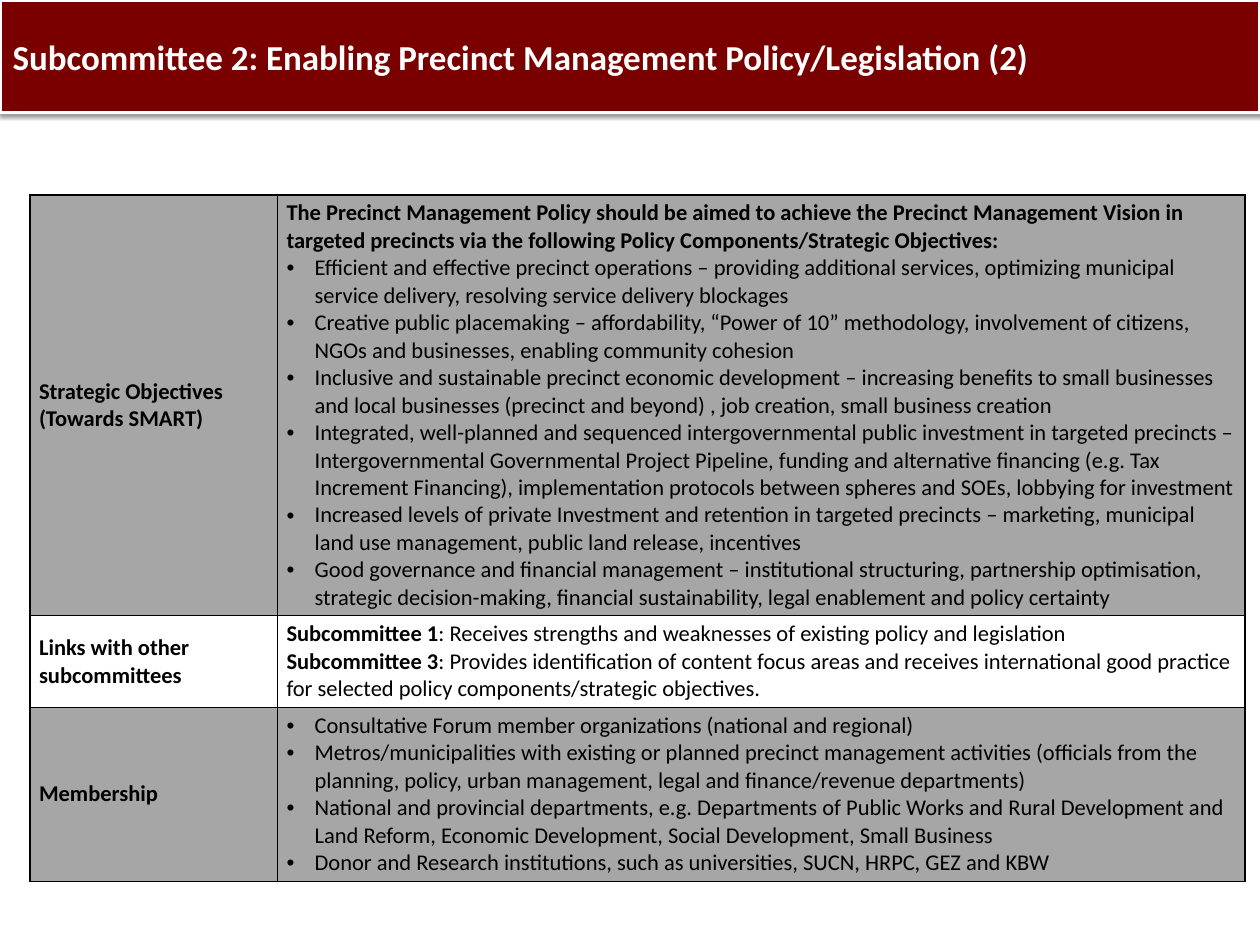
import pptx
import pptx.util
import pptx.dml.color
import pptx.enum.text
import pptx.oxml
from dataclasses import dataclass
from lxml import etree

Pt = pptx.util.Pt
RGB = pptx.dml.color.RGBColor
MIDDLE = pptx.enum.text.MSO_ANCHOR.MIDDLE
DRAWING = 'xmlns:a="http://schemas.openxmlformats.org/drawingml/2006/main"'


@dataclass(frozen=True)
class Theme:
    font: str = "Calibri"
    title_size: int = 28
    body_size: int = 18
    banner: str = "7A0000"
    light: str = "FFFFFF"
    dark: str = "000000"
    shade: str = "A6A6A6"


theme = Theme()


def style_font(font, size, color, bold):
    font.name = theme.font
    font.size = Pt(size)
    font.color.rgb = RGB.from_string(color)
    font.bold = bold


def add_xml(parent, xml):
    parent.append(pptx.oxml.parse_xml(xml))


deck = pptx.Presentation()
deck.slide_width = Pt(1008)
deck.slide_height = Pt(756)
slide = deck.slides.add_slide(deck.slide_layouts[5])

title = slide.shapes.title
title.left, title.top, title.width, title.height = Pt(0), Pt(0), Pt(1008), Pt(90)
title.fill.solid()
title.fill.fore_color.rgb = RGB.from_string(theme.banner)
title.line.color.rgb = RGB.from_string(theme.light)
title.line.width = Pt(3)
add_xml(
    title._element.spPr,
    f'<a:effectLst {DRAWING}><a:outerShdw blurRad="{Pt(3.1)}" dist="{Pt(1.6)}" '
    f'dir="5400000" rotWithShape="0"><a:srgbClr val="{theme.dark}">'
    '<a:alpha val="38000"/></a:srgbClr></a:outerShdw></a:effectLst>',
)
title_frame = title.text_frame
title_frame.text = "Subcommittee 2: Enabling Precinct Management Policy/Legislation (2)"
title_frame.word_wrap = True
title_frame.auto_size = pptx.enum.text.MSO_AUTO_SIZE.NONE
title_frame.vertical_anchor = MIDDLE
title_frame.margin_left = title_frame.margin_right = Pt(10)
title_frame.margin_top = title_frame.margin_bottom = Pt(5)
heading = title_frame.paragraphs[0]
heading.alignment = pptx.enum.text.PP_ALIGN.LEFT
style_font(heading.font, theme.title_size, theme.light, True)

topics = [
    (336, theme.shade, ["Strategic Objectives", "(Towards SMART)"], [
        ("lead", "The Precinct Management Policy should be aimed to achieve the Precinct Management Vision in targeted precincts via the following Policy Components/Strategic Objectives:"),
        ("bullet", "Efficient and effective precinct operations – providing additional services, optimizing municipal service delivery, resolving service delivery blockages"),
        ("bullet", "Creative public placemaking – affordability, “Power of 10” methodology, involvement of citizens, NGOs and businesses, enabling community cohesion"),
        ("bullet", "Inclusive and sustainable precinct economic development – increasing benefits to small businesses and local businesses (precinct and beyond) , job creation, small business creation"),
        ("bullet", "Integrated, well-planned and sequenced intergovernmental public investment in targeted precincts – Intergovernmental Governmental Project Pipeline, funding and alternative financing (e.g. Tax Increment Financing), implementation protocols between spheres and SOEs, lobbying for investment"),
        ("bullet", "Increased levels of private Investment and retention in targeted precincts – marketing, municipal land use management, public land release, incentives"),
        ("bullet", "Good governance and financial management – institutional structuring, partnership optimisation, strategic decision-making, financial sustainability, legal enablement and policy certainty"),
    ]),
    (73, None, ["Links with other subcommittees"], [
        ("Subcommittee 1", ": Receives strengths and weaknesses of existing policy and legislation"),
        ("Subcommittee 3", ": Provides identification of content focus areas and receives international good practice for selected policy components/strategic objectives."),
    ]),
    (139, theme.shade, ["Membership"], [
        ("bullet", "Consultative Forum member organizations (national and regional)"),
        ("bullet", "Metros/municipalities with existing or planned precinct management activities (officials from the planning, policy, urban management, legal and finance/revenue departments)"),
        ("bullet", "National and provincial departments, e.g. Departments of Public Works and Rural Development and Land Reform, Economic Development, Social Development, Small Business"),
        ("bullet", "Donor and Research institutions, such as universities, SUCN, HRPC, GEZ and KBW"),
    ]),
]

table = slide.shapes.add_table(
    len(topics), 2, Pt(24), Pt(156), Pt(972), Pt(sum(topic[0] for topic in topics))
).table
table.first_row = False
table.horz_banding = False
table.columns[0].width = Pt(198)
table.columns[1].width = Pt(774)

for row, (height, shade, labels, details) in enumerate(topics):
    table.rows[row].height = Pt(height)
    label_lines = [("lead", label) for label in labels]
    for column, lines in enumerate((label_lines, details)):
        cell = table.cell(row, column)
        if column == 0:
            cell.vertical_anchor = MIDDLE
        for side in ("lnL", "lnR", "lnT", "lnB"):
            add_xml(
                cell._tc.get_or_add_tcPr(),
                f'<a:{side} {DRAWING} w="{Pt(1)}"><a:solidFill>'
                f'<a:srgbClr val="{theme.dark}"/></a:solidFill></a:{side}>',
            )
        if shade:
            cell.fill.solid()
            cell.fill.fore_color.rgb = RGB.from_string(shade)
        else:
            cell.fill.background()

        for index, (role, text) in enumerate(lines):
            frame = cell.text_frame
            paragraph = frame.add_paragraph() if index else frame.paragraphs[0]
            if role in ("lead", "bullet"):
                paragraph.text = text
                style_font(paragraph.font, theme.body_size, theme.dark, role == "lead")
            else:
                for part, bold in ((role, True), (text, False)):
                    run = paragraph.add_run()
                    run.text = part
                    style_font(run.font, theme.body_size, theme.dark, bold)
            if role == "bullet":
                properties = paragraph._p.get_or_add_pPr()
                properties.set("marL", str(Pt(22.5)))
                properties.set("indent", str(-Pt(22.5)))
                bullet_font = pptx.oxml.parse_xml(f'<a:buFont {DRAWING} typeface="Arial"/>')
                bullet_mark = pptx.oxml.parse_xml(f'<a:buChar {DRAWING} char="•"/>')
                properties.insert(0, bullet_font)
                properties.insert(1, bullet_mark)

deck.save("out.pptx")
